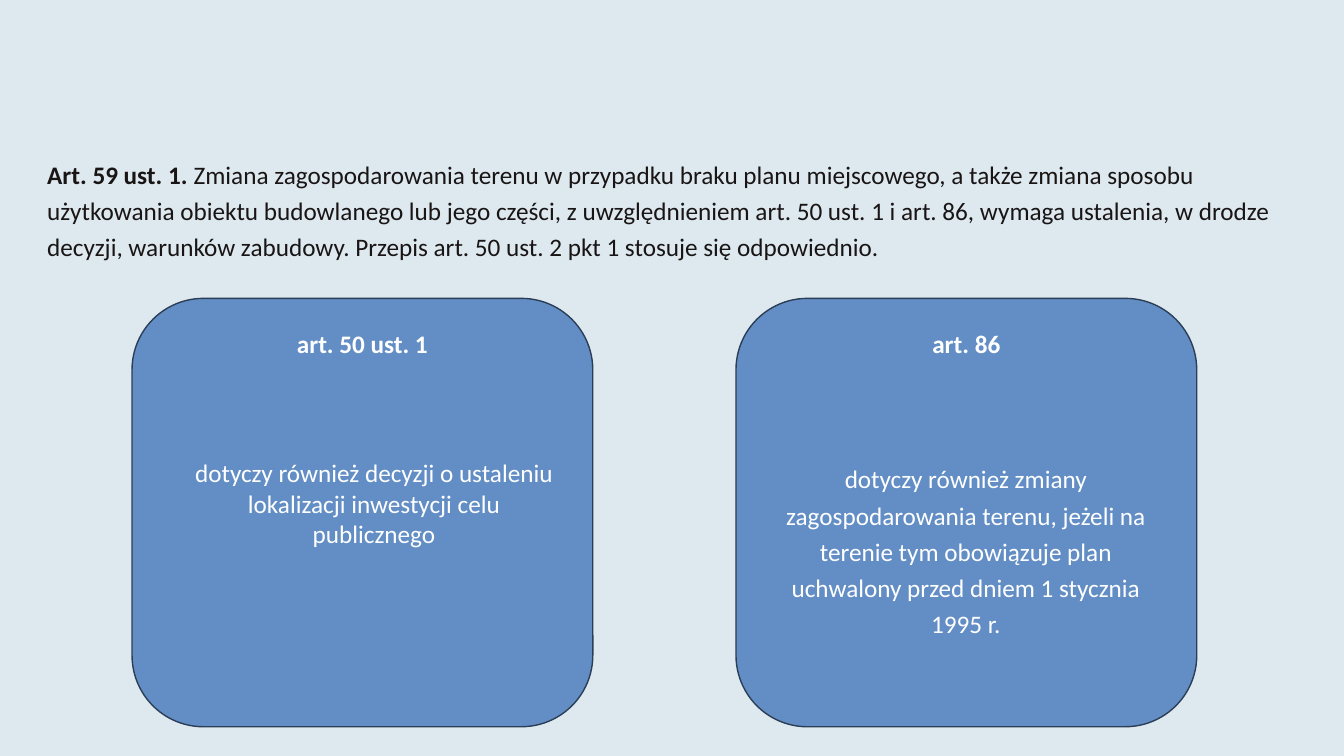
"""Build the slide on article 59 and the two provisions it refers to."""
from pptx import Presentation
from pptx.dml.color import RGBColor
from pptx.enum import shapes, text
from pptx.util import Inches, Pt

ARTICLE = [
    ("Art. 59 ust. 1. ", True),
    ("Zmiana zagospodarowania terenu w przypadku braku planu miejscowego, a także zmiana sposobu "
     "użytkowania obiektu budowlanego lub jego części, z uwzględnieniem art. 50 ust. 1 i art. 86, "
     "wymaga ustalenia, w drodze decyzji, warunków zabudowy. Przepis art. 50 ust. 2 pkt 1 stosuje "
     "się odpowiednio.", False),
]
CARDS = [
    {"left": 1.31, "heading": "art. 50 ust. 1", "note_left": 1.78, "note_height": 1.01, "spacing": 1.0,
     "note": "dotyczy również decyzji o ustaleniu lokalizacji inwestycji celu publicznego"},
    {"left": 7.3, "heading": "art. 86", "note_left": 7.65, "note_height": 1.89, "spacing": 1.2,
     "note": "dotyczy również zmiany zagospodarowania terenu, jeżeli na terenie tym obowiązuje plan "
             "uchwalony przed dniem 1 stycznia 1995 r."},
]
CARD_TOP, CARD_WIDTH, CARD_HEIGHT = 2.96, 4.57, 4.25
NOTE_TOP, NOTE_WIDTH = 4.49, 3.86
BACKGROUND, BLUE, OUTLINE, DARK, WHITE = "DEE8EF", "628EC5", "2B3E56", "191515", "FFFFFF"


def paint(fill, color):
    fill.solid()
    fill.fore_color.rgb = RGBColor.from_string(color)


def write(shape, spans, color, align, spacing=1.0):
    frame = shape.text_frame
    frame.word_wrap = True
    para = frame.paragraphs[0]
    para.alignment = align
    para.line_spacing = spacing
    for words, bold in spans:
        span = para.add_run()
        span.text = words
        span.font.name = "Calibri"
        span.font.size = Pt(18)
        span.font.bold = bold
        paint(span.font.fill, color)


def add_text(page, place, spans, color, align, spacing):
    box = page.shapes.add_textbox(*map(Inches, place))
    write(box, spans, color, align, spacing)


def add_card(page, left, heading):
    place = (left, CARD_TOP, CARD_WIDTH, CARD_HEIGHT)
    card = page.shapes.add_shape(shapes.MSO_SHAPE.ROUNDED_RECTANGLE, *map(Inches, place))
    card.shadow.inherit = False
    paint(card.fill, BLUE)
    paint(card.line.fill, OUTLINE)
    card.line.width = Pt(1)
    card.text_frame.vertical_anchor = text.MSO_ANCHOR.TOP
    card.text_frame.margin_top = Inches(0.09)
    write(card, [(heading, True)], WHITE, text.PP_ALIGN.CENTER)


def main():
    deck = Presentation()
    deck.slide_width, deck.slide_height = Inches(13.33), Inches(7.5)
    page = deck.slides.add_slide(deck.slide_layouts.get_by_name("Blank"))
    paint(page.background.fill, BACKGROUND)
    add_text(page, (0.37, 1.47, 12.6, 1.17), ARTICLE, DARK, text.PP_ALIGN.LEFT, 1.2)
    for card in CARDS:
        add_card(page, card["left"], card["heading"])
        place = (card["note_left"], NOTE_TOP, NOTE_WIDTH, card["note_height"])
        add_text(page, place, [(card["note"], False)], WHITE, text.PP_ALIGN.CENTER, card["spacing"])
    deck.save("out.pptx")


if __name__ == "__main__":
    main()
